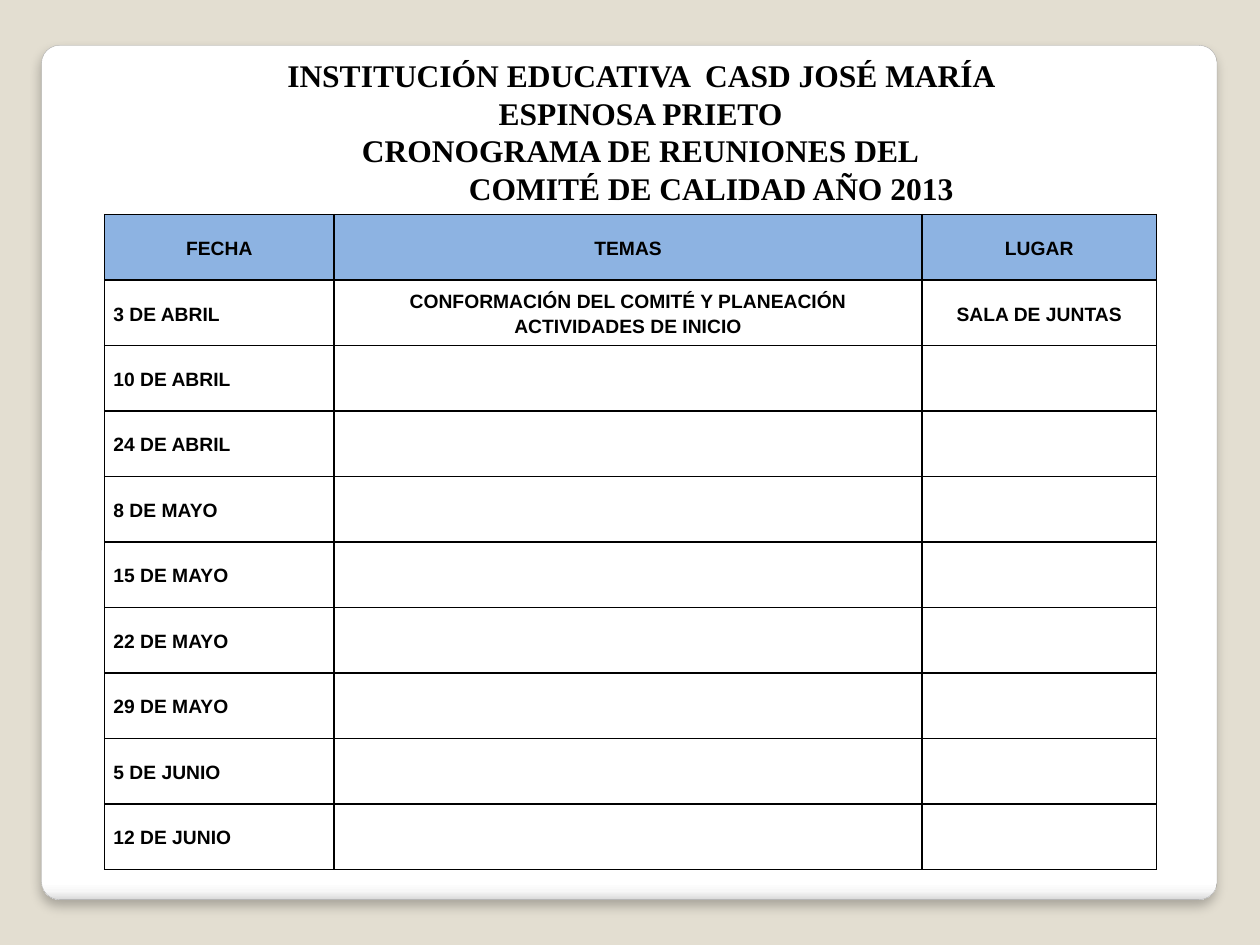
from dataclasses import dataclass
from lxml.etree import fromstring
from pptx import Presentation
from pptx.dml.color import RGBColor
from pptx.enum.shapes import MSO_SHAPE
from pptx.enum.text import MSO_ANCHOR, PP_ALIGN
from pptx.oxml.ns import nsdecls
from pptx.util import Inches, Pt


@dataclass
class Theme:
    page: str = "E3DED1"
    ink: str = "000000"
    paper: str = "FFFFFF"
    head: str = "8DB3E2"
    edge: str = "A4A4A4"
    fade: tuple = ((0, "FFFFFF"), (98, "FFFFFF"), (99, "F7F7F7"), (100, "DADADA"))
    serif: str = "Times New Roman"
    sans: str = "Arial"
    large: int = 18
    small: int = 11


def node(tag, body, attrs=""):
    return fromstring(f"<a:{tag} {nsdecls('a')} {attrs}>{body}</a:{tag}>")


def tint(name):
    return RGBColor.from_string(name)


class Board:
    def __init__(self, theme):
        self.theme = theme
        self.deck = Presentation()
        self.deck.slide_width, self.deck.slide_height = Inches(10), Inches(7.5)
        self.slide = self.deck.slides.add_slide(self.deck.slide_layouts[5])
        fill = self.slide.background.fill
        fill.solid()
        fill.fore_color.rgb = tint(theme.page)

    def span(self, x, y, w, h):
        wide, high = self.deck.slide_width, self.deck.slide_height
        return [round(v) for v in (x * wide, y * high, w * wide, h * high)]

    def style(self, para, face, size, align):
        para.alignment = align
        font = para.font
        font.name, font.size, font.bold = face, Pt(size), True
        font.color.rgb = tint(self.theme.ink)

    def card(self, box, curve):
        shapes = self.slide.shapes
        card = shapes.add_shape(MSO_SHAPE.ROUNDED_RECTANGLE, *self.span(*box))
        card.adjustments[0] = curve
        card.line.color.rgb = tint(self.theme.edge)
        card.line.width = Pt(0.16)
        stops = "".join(
            f'<a:gs pos="{at * 1000}"><a:srgbClr val="{hue}"/></a:gs>'
            for at, hue in self.theme.fade
        )
        props = card.element.spPr
        fade = node("gradFill", f'<a:gsLst>{stops}</a:gsLst><a:lin ang="5400000" scaled="0"/>')
        props.insert(2, fade)
        props.append(node(
            "effectLst",
            f'<a:outerShdw blurRad="{Pt(6)}" dist="{Pt(4)}" dir="5400000" algn="ctr" rotWithShape="0">'
            f'<a:srgbClr val="{self.theme.ink}"><a:alpha val="25000"/></a:srgbClr></a:outerShdw>',
        ))
        shapes.element.insert(2, card.element)

    def title(self, box, lines, indent):
        title = self.slide.shapes.title
        title.left, title.top, title.width, title.height = self.span(*box)
        frame = title.text_frame
        frame.text = "\n".join(lines)
        frame.word_wrap = True
        frame.vertical_anchor = MSO_ANCHOR.MIDDLE
        for para in frame.paragraphs:
            self.style(para, self.theme.serif, self.theme.large, PP_ALIGN.CENTER)
        para._p.get_or_add_pPr().set("marL", str(Inches(indent)))

    def cell(self, cell, text, align, hue):
        cell.text = text
        cell.vertical_anchor = MSO_ANCHOR.MIDDLE
        cell.margin_left = cell.margin_right = Inches(0.07)
        cell.margin_top = cell.margin_bottom = 0
        cell.fill.solid()
        cell.fill.fore_color.rgb = tint(hue)
        para = cell.text_frame.paragraphs[0]
        para.line_spacing = 1.15
        self.style(para, self.theme.sans, self.theme.small, align)
        line = f'<a:solidFill><a:srgbClr val="{self.theme.ink}"/></a:solidFill>'
        props = cell._tc.get_or_add_tcPr()
        for spot, side in enumerate("LRTB"):
            props.insert(spot, node(f"ln{side}", line, f'w="{Pt(1)}"'))

    def table(self, box, parts, rows):
        area = self.span(*box)
        table = self.slide.shapes.add_table(len(rows), len(parts), *area).table
        for col, part in zip(table.columns, parts):
            col.width = round(area[2] * part / sum(parts))
        for r, row in enumerate(rows):
            table.rows[r].height = round(area[3] / len(rows))
            for c, text in enumerate(row):
                align = PP_ALIGN.LEFT if r and not c else PP_ALIGN.CENTER
                hue = self.theme.paper if r else self.theme.head
                self.cell(table.cell(r, c), text, align, hue)


def main():
    dates = ["10 DE ABRIL", "24 DE ABRIL", "8 DE MAYO", "15 DE MAYO",
             "22 DE MAYO", "29 DE MAYO", "5 DE JUNIO", "12 DE JUNIO"]
    rows = [
        ("FECHA", "TEMAS", "LUGAR"),
        ("3 DE ABRIL", "CONFORMACIÓN DEL COMITÉ Y PLANEACIÓN ACTIVIDADES DE INICIO",
         "SALA DE JUNTAS"),
        *((date, "", "") for date in dates),
    ]
    board = Board(Theme())
    board.card((0.033, 0.048, 0.933, 0.904), 0.021)
    board.title((0.217, 0.05, 0.583, 0.178), [
        "INSTITUCIÓN EDUCATIVA  CASD JOSÉ MARÍA ESPINOSA PRIETO",
        "CRONOGRAMA DE REUNIONES DEL",
        "COMITÉ DE CALIDAD AÑO 2013",
    ], 1.12)
    board.table((0.083, 0.227, 0.835, 0.693), (1.82, 4.66, 1.86), rows)
    board.deck.save("out.pptx")


if __name__ == "__main__":
    main()
